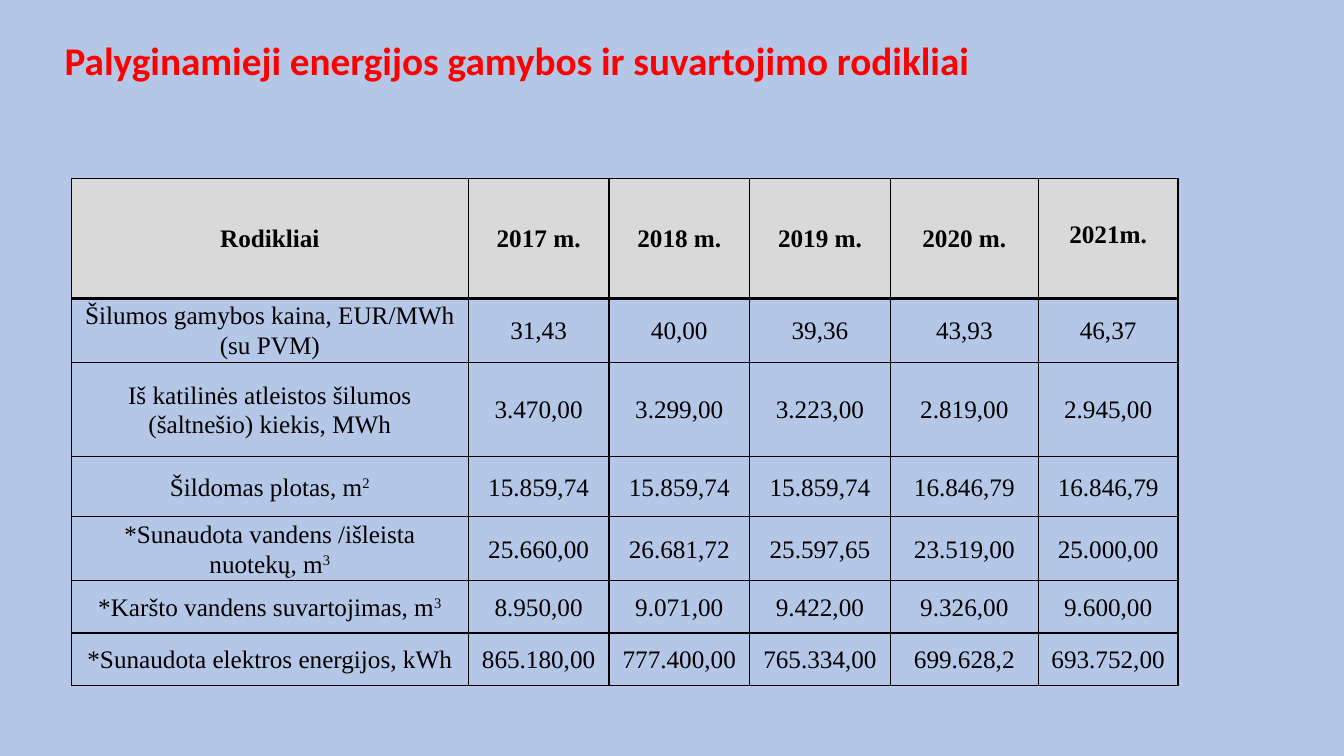
from lxml.etree import SubElement
from pptx import Presentation
from pptx.dml.color import RGBColor
from pptx.enum.text import MSO_ANCHOR as Anchor, MSO_AUTO_SIZE as AutoSize, PP_ALIGN as Align
from pptx.oxml.ns import qn
from pptx.util import Pt

PX = 9525
SKY = RGBColor(0xB4, 0xC7, 0xE7)
RED = RGBColor(0xFF, 0x00, 0x00)
BLACK = RGBColor(0x00, 0x00, 0x00)
GREY = RGBColor(0xD9, 0xD9, 0xD9)

COLUMNS = [378, 134, 134, 134, 141, 133]
ROWS = [114, 61, 90, 57, 61, 50, 50]
INDICATORS = [
    ["Rodikliai", "2017 m.", "2018 m.", "2019 m.", "2020 m.", "2021m."],
    ["Šilumos gamybos kaina, EUR/MWh (su PVM)", "31,43", "40,00", "39,36", "43,93", "46,37"],
    ["Iš katilinės atleistos šilumos (šaltnešio) kiekis, MWh",
     "3.470,00", "3.299,00", "3.223,00", "2.819,00", "2.945,00"],
    ["Šildomas plotas, m^2", "15.859,74", "15.859,74", "15.859,74", "16.846,79", "16.846,79"],
    ["*Sunaudota vandens /išleista nuotekų, m^3",
     "25.660,00", "26.681,72", "25.597,65", "23.519,00", "25.000,00"],
    ["*Karšto vandens suvartojimas, m^3",
     "8.950,00", "9.071,00", "9.422,00", "9.326,00", "9.600,00"],
    ["*Sunaudota elektros energijos, kWh",
     "865.180,00", "777.400,00", "765.334,00", "699.628,2", "693.752,00"],
]


def add_span(para, text, name, size, color, bold):
    span = para.add_run()
    span.text = text
    for key, value in {"name": name, "size": Pt(size), "bold": bold}.items():
        setattr(span.font, key, value)
    span.font.color.rgb = color
    return span


def add_border(cell, side, width):
    line = SubElement(cell._tc.get_or_add_tcPr(), qn(f"a:ln{side}"), w=str(Pt(width)))
    fill = SubElement(line, qn("a:solidFill"))
    SubElement(fill, qn("a:srgbClr"), val=str(BLACK))


deck = Presentation()
deck.slide_width, deck.slide_height = 1280 * PX, 720 * PX
page = deck.slides.add_slide(deck.slide_layouts[5])
page.background.fill.solid()
page.background.fill.fore_color.rgb = SKY

title = page.shapes.title
for key, value in {"left": 52, "top": 0, "width": 1152, "height": 120}.items():
    setattr(title, key, value * PX)
frame = title.text_frame
frame.word_wrap = True
frame.auto_size = AutoSize.NONE
frame.vertical_anchor = Anchor.MIDDLE
para = frame.paragraphs[0]
para.alignment = Align.LEFT
para.line_spacing = 0.9
add_span(para, "Palyginamieji energijos gamybos ir suvartojimo rodikliai", "Calibri", 28, RED, True)

table = page.shapes.add_table(len(ROWS), len(COLUMNS), 68 * PX, 170 * PX,
                              sum(COLUMNS) * PX, sum(ROWS) * PX).table
table.first_row = False
table.horz_banding = False
for column, width in zip(table.columns, COLUMNS):
    column.width = width * PX
for row, height in zip(table.rows, ROWS):
    row.height = height * PX

for row_index, values in enumerate(INDICATORS):
    header = row_index == 0
    borders = {"L": 1, "R": 1, "T": 2.25 if row_index == 1 else 1, "B": 2.25 if header else 1}
    for column_index, value in enumerate(values):
        cell = table.cell(row_index, column_index)
        last_year = header and column_index == len(values) - 1
        margins = {"left": 7, "right": 7, "top": 0, "bottom": 8 if last_year else 0}
        for side, margin in margins.items():
            setattr(cell, f"margin_{side}", margin * PX)
        cell.vertical_anchor = Anchor.MIDDLE
        for side, width in borders.items():
            add_border(cell, side, width)
        if header:
            cell.fill.solid()
            cell.fill.fore_color.rgb = GREY
        else:
            cell.fill.background()
        para = cell.text_frame.paragraphs[0]
        for key, setting in {"alignment": Align.CENTER, "line_spacing": 1.07,
                             "space_after": Pt(8)}.items():
            setattr(para, key, setting)
        text, _, power = value.partition("^")
        add_span(para, text, "Times New Roman", 18, BLACK, header)
        if power:
            span = add_span(para, power, "Times New Roman", 18, BLACK, header)
            span.font._element.set("baseline", "30000")

deck.save("out.pptx")
